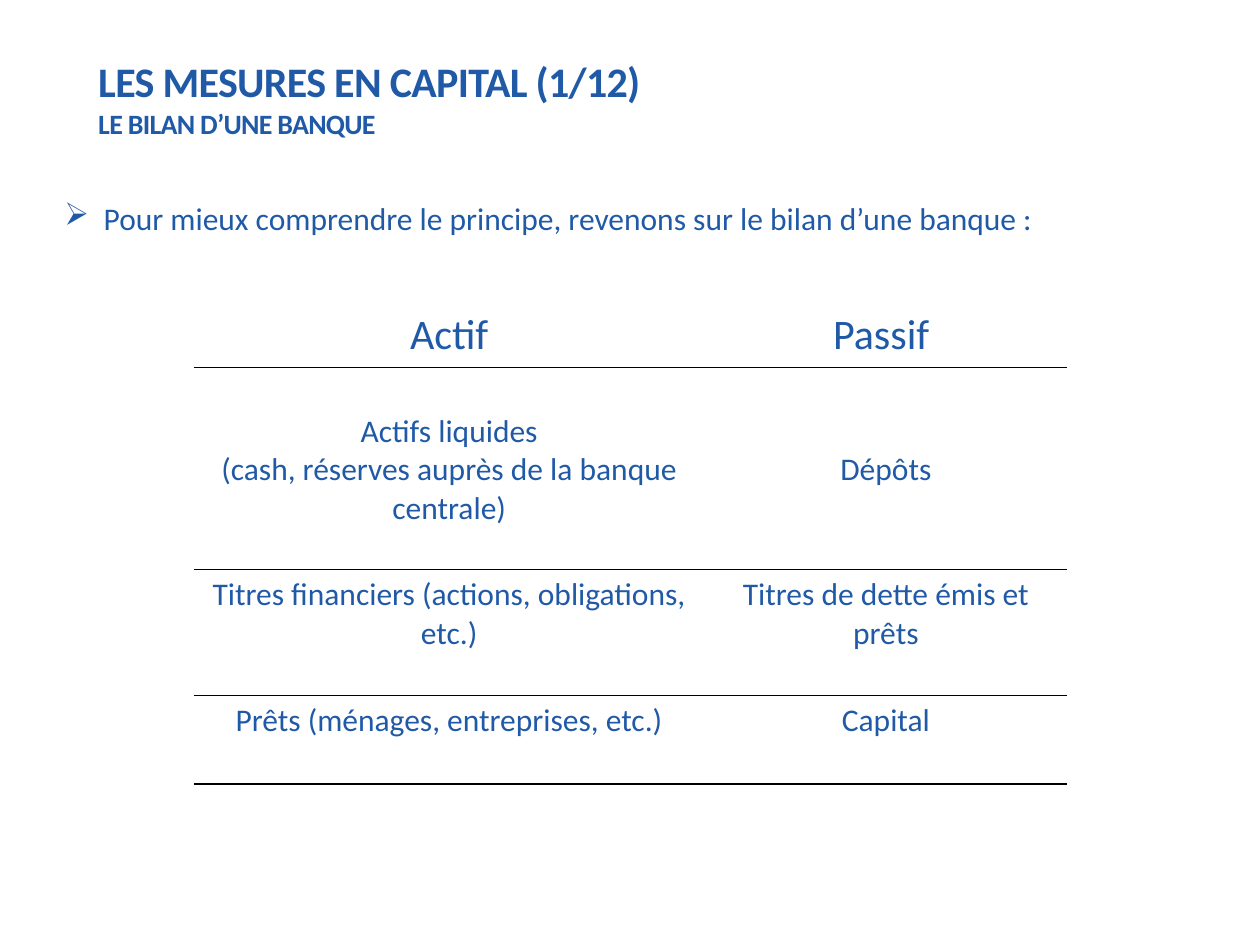
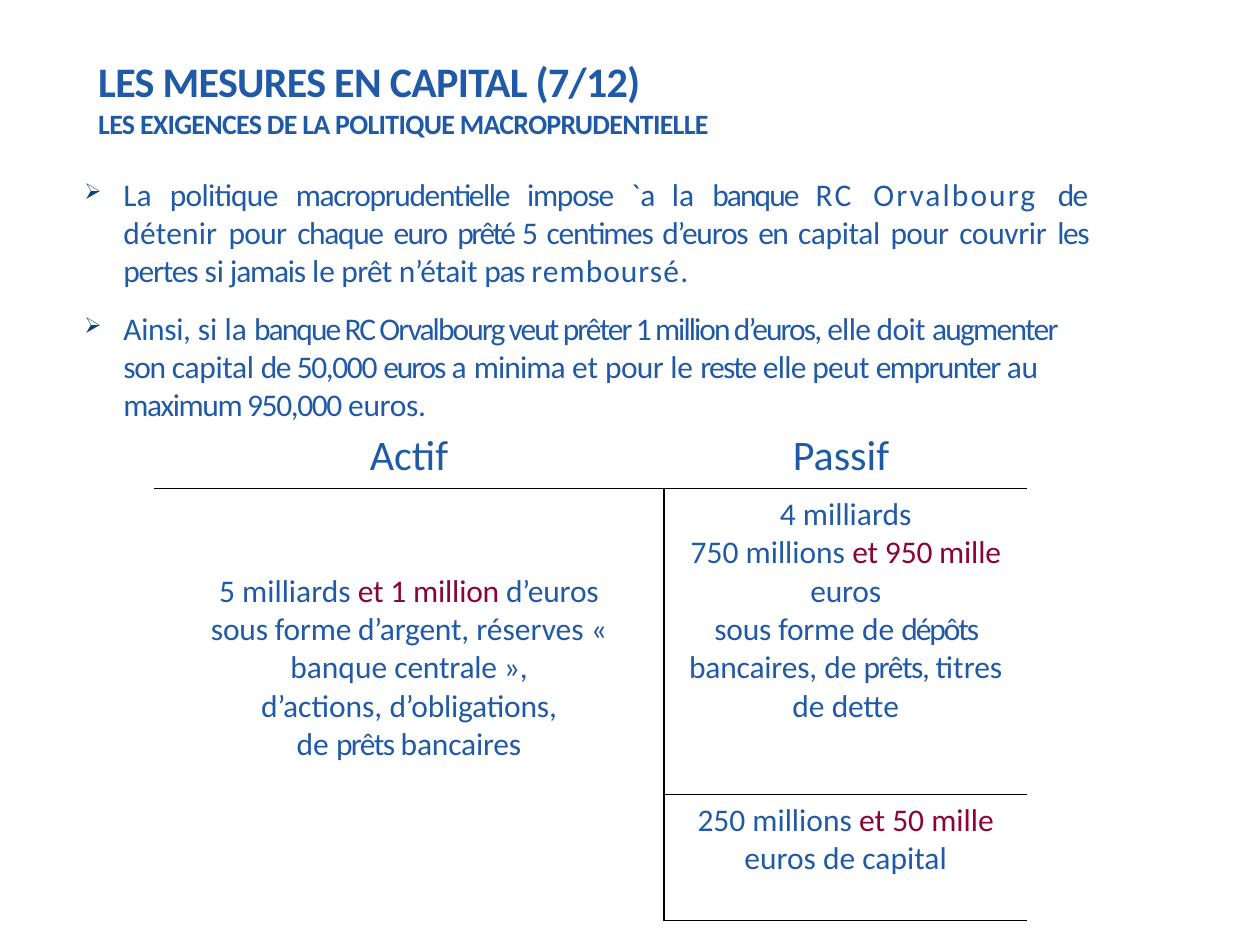
from lxml import etree
from pptx import Presentation
from pptx.dml.color import RGBColor
from pptx.enum.text import MSO_ANCHOR, MSO_AUTO_SIZE, PP_ALIGN
from pptx.oxml.ns import qn
from pptx.util import Cm, Pt

LEFT, CENTER, JUSTIFY = PP_ALIGN.LEFT, PP_ALIGN.CENTER, PP_ALIGN.JUSTIFY
TOP, MIDDLE = MSO_ANCHOR.TOP, MSO_ANCHOR.MIDDLE
NO_AUTOSIZE = MSO_AUTO_SIZE.NONE

COLOURS = {"text": "205AA7", "accent": "8B0534", "bullet": "07447C", "line": "000000"}
FONT = "Calibri"
PLAIN_TABLE = "{2D5ABB26-0587-4C30-8999-92F81FD0307C}"
BODY_SIZE, HEAD_SIZE = 18, 24
COLUMN_WIDTHS = (10.29, 7.32)
HEAD_ROW = 1.27
CELL_TOP = 0.13
BODY_LINE = 0.775
HANGING = 0.79

# Content: a run is (text, letter spacing, colour); the last two may be left out
HEADS = ("Actif", "Passif ")

INTRO = [[("Pour mieux comprendre le principe, revenons sur le bilan d’une banque :",)]]

RULES = [
    [("La ",), ("politique ", -0.4), ("macroprudentielle ", -0.8), ("impose ", -0.7),
     ("`", -11.6), ("a ", -0.9), ("la ",), ("banque ", -1.1), ("RC Orvalbourg ", 1.2),
     ("de", -1), (" détenir ", 0.1), ("pour ", -0.4), ("chaque ", -0.8), ("euro ", -0.9),
     ("prêté 5 ", -1.4), ("centimes d’euros ", -0.7), ("en ", -0.9), ("capital", -0.2),
     (" pour ", -0.4), ("couvrir ", -0.2), ("les ", -0.8), ("pertes ", -0.7), ("si",),
     (" jamais ", -0.7), ("le",), (" prêt ", -0.4), ("n’était ", -0.2), ("pas ", -0.8),
     ("remboursé", 0.6), (".", 0.8)],
    [("Ainsi, ", -0.2), ("si la ",),
     ("banque RC Orvalbourg veut prêter 1 million d’euros, ", -1.1),
     ("elle doit ", -0.4), ("augmenter ", -1), ("son ", -0.8), ("capital ", -0.2),
     ("de ", -1), ("50,000 ", -0.8), ("euros ", -1.2), ("a ",), ("minima ", -0.5),
     ("et ",), ("pour ", -0.4), ("le ",), ("reste ", -1), ("elle peut ", -0.4),
     ("emprunter ", -0.9), ("au ", -0.2), ("maximum 950,000 ", -0.8), ("euros.", -0.2)],
]

# Table cells: (lines skipped above the text, paragraphs)
BALANCE_ROWS = [
    [(1, [[("Actifs liquides",)], [("(cash, réserves auprès de la banque centrale)",)]]),
     (2, [[("Dépôts",)]])],
    [(0, [[("Titres financiers (actions, obligations, etc.)",)]]),
     (0, [[("Titres de dette émis et prêts",)]])],
    [(0, [[("Prêts (ménages, entreprises, etc.)",)]]),
     (0, [[("Capital",)]])],
]

CAPITAL_ROWS = [
    [(2, [[("5 milliards ",), ("et 1 million ", -0.1, "accent"), ("d’euros", -0.1)],
          [("sous forme d’argent,", -0.1), (" réserves « banque ",), ("centrale »,", -0.1)],
          [("d’actions, ",), ("d’obligations,", -0.1)],
          [("de ",), ("prêts ", -0.9), ("bancaires", -0.1)]]),
     (0, [[("4 milliards",)],
          [("750 millions ",), ("et 950 mille ", -0.1, "accent"), ("euros", -0.1)],
          [("sous forme", -0.1), (" de ",), ("dépôts ", -1.2), ("bancaires, ", -0.1),
           ("de ",), ("prêts, ", -0.8), ("titres de ",), ("dette", -0.1)]])],
    [None,
     (0, [[("250 millions ",), ("et 50 mille ", 0, "accent"), ("euros de capital",)]])],
]

SLIDES = [
    {"title": "LES MESURES EN CAPITAL (1/12)",
     "subtitle": "LE BILAN D’UNE BANQUE",
     "bullets": {"paragraphs": INTRO, "place": (1.3, 3.94, 22.45, 0.84),
                 "margin": HANGING, "aligns": (LEFT,)},
     "table": {"rows": BALANCE_ROWS, "corner": (3.91, 6.12), "heights": (4.07, 2.54, 1.78),
               "ruled_rows": {0: (0, 1), 1: (0, 1), 3: (0, 1)}}},
    {"title": "LES MESURES EN CAPITAL (7/12)",
     "subtitle": "LES EXIGENCES DE LA POLITIQUE MACROPRUDENTIELLE",
     "bullets": {"paragraphs": RULES, "place": (-0.51, 3.45, 22.45, 5.11),
                 "margin": 3.0, "aligns": (JUSTIFY, LEFT), "gap": 6, "small": True},
     "table": {"rows": CAPITAL_ROWS, "corner": (3.1, 8.56), "heights": (6.17, 2.54),
               "ruled_rows": {0: (0, 1), 1: (1,), 2: (0, 1)}, "divided": True}},
]


def add_run(para, text, spacing=0, colour="text", size=BODY_SIZE, bold=False):
    span = para.add_run()
    span.text = text
    span.font.name = FONT
    span.font.size = Pt(size)
    span.font.bold = bold
    span.font.color.rgb = RGBColor.from_string(COLOURS[colour])
    if spacing:
        span.font._element.set("spc", str(round(spacing * 100)))


def fill_frame(frame, paragraphs, size=BODY_SIZE):
    for index, runs in enumerate(paragraphs):
        para = frame.add_paragraph() if index else frame.paragraphs[0]
        for run in runs:
            add_run(para, *run, size=size)
    return frame.paragraphs


def set_insets(frame, top):
    frame.margin_left = frame.margin_right = frame.margin_bottom = 0
    frame.margin_top = Cm(top)
    frame.word_wrap = True
    frame.auto_size = NO_AUTOSIZE


def indent(para, margin, first=0):
    properties = para._p.get_or_add_pPr()
    properties.set("marL", str(Cm(margin)))
    properties.set("indent", str(Cm(first)))
    return properties


def place_title(page, title, subtitle):
    box = page.shapes.title
    box.left, box.top, box.width, box.height = Cm(1.9), Cm(0.74), Cm(22.86), Cm(2.08)
    frame = box.text_frame
    set_insets(frame, 0.38)
    frame.vertical_anchor = MIDDLE
    para = frame.paragraphs[0]
    para.alignment = LEFT
    indent(para, 0.08)
    add_run(para, title, -0.4, size=24, bold=True)
    para.add_line_break()
    add_run(para, subtitle, -0.4, size=16, bold=True)


def add_bullets(page, paragraphs, place, margin, aligns, gap=0, small=False):
    box = page.shapes.add_textbox(*map(Cm, place))
    frame = box.text_frame
    set_insets(frame, 0.08)
    for index, para in enumerate(fill_frame(frame, paragraphs)):
        para.alignment = aligns[index]
        para.space_after = Pt(gap)
        if index:
            para.space_before = Pt(gap)
        properties = indent(para, margin, -HANGING)
        if small:
            colour = etree.SubElement(properties, qn("a:buClr"))
            etree.SubElement(colour, qn("a:srgbClr"), val=COLOURS["bullet"])
            etree.SubElement(properties, qn("a:buSzPct"), val="70000")
        etree.SubElement(properties, qn("a:buChar"), char="➢")


def add_borders(cell, sides):
    properties = cell._tc.get_or_add_tcPr()
    for side in "LRTB":
        if side in sides:
            line = etree.SubElement(properties, qn(f"a:ln{side}"), w=str(Pt(1)))
            fill = etree.SubElement(line, qn("a:solidFill"))
            etree.SubElement(fill, qn("a:srgbClr"), val=COLOURS["line"])


def add_balance(page, rows, corner, heights, ruled_rows, divided=False):
    heights = (HEAD_ROW, *heights)
    rows = [[(0, [[(head,)]]) for head in HEADS], *rows]
    frame = page.shapes.add_table(len(rows), len(HEADS), *map(Cm, corner),
                                  Cm(sum(COLUMN_WIDTHS)), Cm(sum(heights)))
    table = frame.table
    table._tbl.tblPr.find(qn("a:tableStyleId")).text = PLAIN_TABLE
    table.first_row = table.horz_banding = False
    for column, width in zip(table.columns, COLUMN_WIDTHS):
        column.width = Cm(width)
    for row, height in zip(table.rows, heights):
        row.height = Cm(height)

    for r, row in enumerate(rows):
        for c, content in enumerate(row):
            cell = table.cell(r, c)
            # Rules below the row, and the divider between the two columns
            sides = "B" if c in ruled_rows.get(r, ()) else ""
            if c in ruled_rows.get(r - 1, ()):
                sides += "T"
            if divided and r:
                sides += "RL"[c]
            add_borders(cell, sides)
            cell.fill.background()
            if content is None:
                table.cell(r - 1, c).merge(cell)
                continue
            skipped, paragraphs = content
            cell.vertical_anchor = TOP
            cell.margin_top = Cm(CELL_TOP + skipped * BODY_LINE)
            size = BODY_SIZE if r else HEAD_SIZE
            for para in fill_frame(cell.text_frame, paragraphs, size):
                para.alignment = CENTER


def main():
    deck = Presentation()
    deck.slide_width, deck.slide_height = Cm(25.4), Cm(19.05)
    for content in SLIDES:
        page = deck.slides.add_slide(deck.slide_layouts[5])
        place_title(page, content["title"], content["subtitle"])
        add_bullets(page, **content["bullets"])
        add_balance(page, **content["table"])
    deck.save("out.pptx")


if __name__ == "__main__":
    main()
